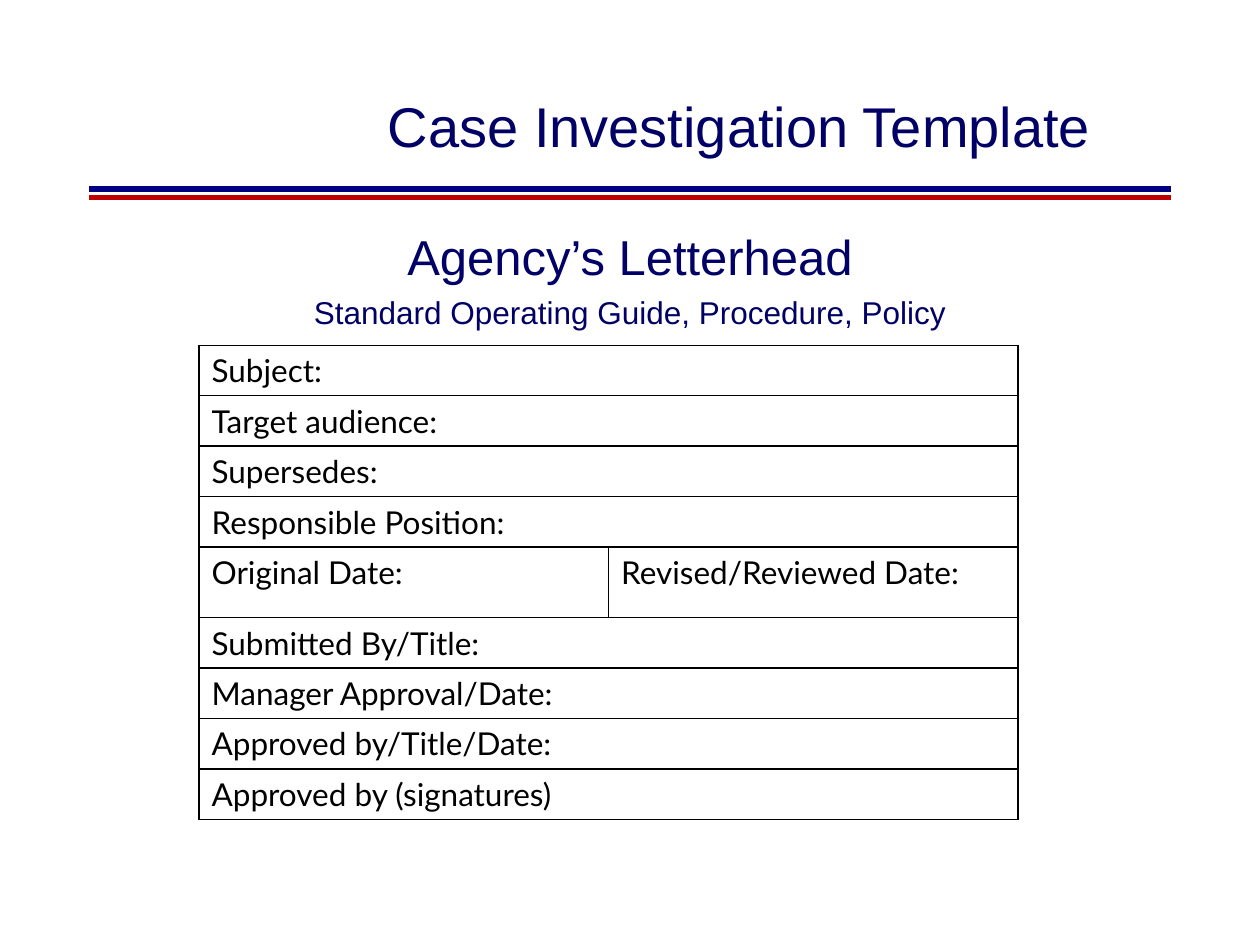
"""Build the case investigation template slide."""
from lxml.etree import SubElement
from pptx import Presentation
from pptx.dml.color import RGBColor
from pptx.enum.shapes import MSO_CONNECTOR
from pptx.enum.text import MSO_ANCHOR, PP_ALIGN
from pptx.oxml import parse_xml
from pptx.oxml.ns import nsdecls, qn
from pptx.util import Inches, Pt

THEME = {
    "navy": "000066", "rule_blue": "000080", "rule_red": "C00000",
    "black": "000000", "white": "FFFFFF",
    "heading_font": "Arial", "table_font": "Lato",
    "title": 32, "heading": 28, "body": 18,
}


def write(p, text, size=THEME["body"], font=THEME["heading_font"],
          color=THEME["navy"], align=PP_ALIGN.CENTER, before=0):
    p.alignment = align
    p.space_before = Pt(before)
    r = p.add_run()
    r.text = text
    r.font.size = Pt(size)
    r.font.name = font
    r.font.color.rgb = RGBColor.from_string(color)


def set_borders(cell, color, width):
    tcPr = cell._tc.get_or_add_tcPr()
    for i, side in enumerate(("lnL", "lnR", "lnT", "lnB")):
        tcPr.insert(i, parse_xml(
            f'<a:{side} {nsdecls("a")} w="{Pt(width)}"><a:solidFill>'
            f'<a:srgbClr val="{color}"/></a:solidFill></a:{side}>'))


prs = Presentation()
prs.slide_width, prs.slide_height = Inches(10), Inches(7.5)
s = prs.slides.add_slide(prs.slide_layouts[5])

for y, color in ((1.5, THEME["rule_blue"]), (1.57, THEME["rule_red"])):
    rule = s.shapes.add_connector(
        MSO_CONNECTOR.STRAIGHT, Inches(0.71), Inches(y), Inches(9.29), Inches(y))
    rule.line.color.rgb = RGBColor.from_string(color)
    rule.line.width = Pt(3)
    SubElement(rule._element.spPr, qn("a:effectLst"))

title = s.shapes.title
title.left, title.top = Inches(2.58), Inches(0.58)
title.width, title.height = Inches(6.58), Inches(0.83)
title.text_frame.vertical_anchor = MSO_ANCHOR.MIDDLE
write(title.text_frame.paragraphs[0], "Case Investigation Template", size=THEME["title"])

letterhead = s.shapes.add_textbox(Inches(0.75), Inches(1.75), Inches(8.5), Inches(5.08))
tf = letterhead.text_frame
tf.word_wrap = True
write(tf.paragraphs[0], "Agency’s Letterhead", size=THEME["heading"])
write(tf.add_paragraph(), "Standard Operating Guide, Procedure, Policy", before=4)

rows = [
    ["Subject:"],
    ["Target audience:"],
    ["Supersedes:"],
    ["Responsible Position:"],
    ["Original Date:", "Revised/Reviewed Date:"],
    ["Submitted By/Title:"],
    ["Manager Approval/Date:"],
    ["Approved by/Title/Date:"],
    ["Approved by (signatures)"],
]
heights = [0.56 if len(labels) == 2 else 0.4 for labels in rows]
table = s.shapes.add_table(
    len(rows), 2, Inches(1.58), Inches(2.74), Inches(6.5), Inches(sum(heights))).table
table.first_row = table.horz_banding = False

for i, (labels, height) in enumerate(zip(rows, heights)):
    table.rows[i].height = Inches(height)
    for cell in table.rows[i].cells:
        cell.fill.solid()
        cell.fill.fore_color.rgb = RGBColor.from_string(THEME["white"])
        set_borders(cell, THEME["black"], 1)
    if len(labels) == 1:
        table.cell(i, 0).merge(table.cell(i, 1))
    for j, label in enumerate(labels):
        write(table.cell(i, j).text_frame.paragraphs[0], label,
              font=THEME["table_font"], color=THEME["black"], align=PP_ALIGN.LEFT)

prs.save("out.pptx")
